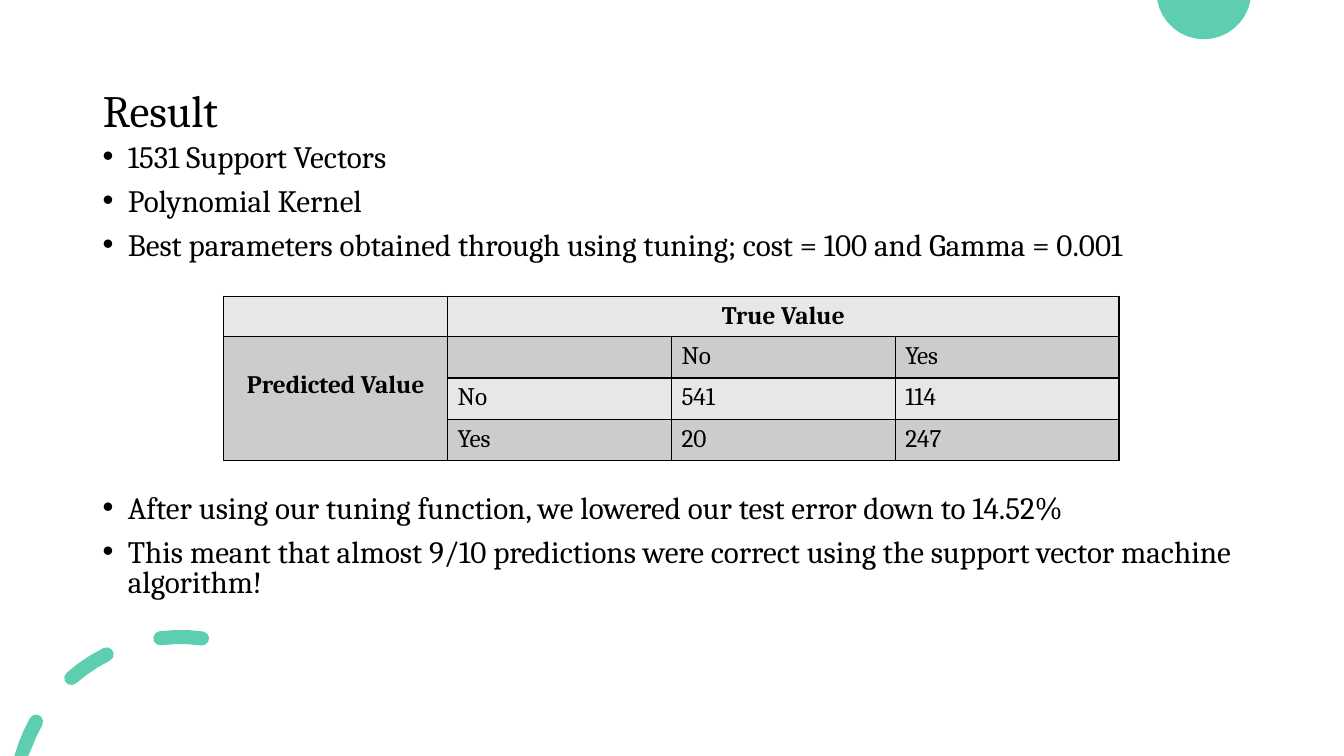
from math import cos, radians, sin

from lxml.etree import SubElement
from pptx import Presentation
from pptx.dml.color import RGBColor
from pptx.enum.text import MSO_ANCHOR, PP_ALIGN
from pptx.oxml.ns import qn
from pptx.util import Inches, Pt

FONT = "Cambria"
BLACK, GREEN, LIGHT, DARK = "000000", "5DCEAF", "E7E7E7", "CCCCCC"
SLIDE_WIDTH, SLIDE_HEIGHT = 13.33, 7.5

SETUP = [
    "1531 Support Vectors",
    "Polynomial Kernel",
    "Best parameters obtained through using tuning; cost = 100 and Gamma = 0.001",
]
FINDINGS = [
    "After using our tuning function, we lowered our test error down to 14.52%",
    "This meant that almost 9/10 predictions were correct using the support "
    "vector machine algorithm!",
]
CONFUSION = [
    ["", "True Value", "", ""],
    ["Predicted Value", "", "No", "Yes"],
    ["", "No", "541", "114"],
    ["", "Yes", "20", "247"],
]
HEADINGS = ("True Value", "Predicted Value")


def color(value):
    return RGBColor.from_string(value)


def style(paragraph, size, bold=False):
    for span in paragraph.runs:
        span.font.name = FONT
        span.font.size = Pt(size)
        span.font.bold = bold
        span.font.color.rgb = color(BLACK)


def place(shape, box):
    shape.left, shape.top, shape.width, shape.height = map(Inches, box)


def arc(center, radius, start, end, steps):
    """Points on an arc, angles in degrees, kept inside the slide."""
    x, y = center
    angles = [radians(start + (end - start) * i / steps) for i in range(steps + 1)]
    return [
        (x + radius * cos(t), min(max(y - radius * sin(t), 0), SLIDE_HEIGHT))
        for t in angles
    ]


def round_dash(center, radius, thickness, start, end):
    """Outline of an arc-shaped stroke with round ends."""
    half = thickness / 2
    first, last = (arc(center, radius, angle, angle, 1)[0] for angle in (start, end))
    return (
        arc(center, radius + half, start, end, 3)
        + arc(last, half, end, end + 180, 5)[1:-1]
        + arc(center, radius - half, end, start, 3)
        + arc(first, half, start + 180, start + 360, 5)[1:-1]
    )


def add_outline(page, contours):
    contours = [[(Inches(x), Inches(y)) for x, y in points] for points in contours]
    builder = page.shapes.build_freeform(*contours[0][0])
    for index, points in enumerate(contours):
        if index:
            builder.move_to(*points[0])
        builder.add_line_segments(points[1:], close=True)
    shape = builder.convert_to_shape()
    shape.fill.solid()
    shape.fill.fore_color.rgb = color(GREEN)
    shape.line.fill.background()
    shape.shadow.inherit = False


def add_decoration(page):
    add_outline(page, [arc((11.94, -0.08), 0.47, 190, 350, 16)])
    dashes = [(150.8, 164), (116.5, 131.3), (82.5, 97)]
    add_outline(
        page, [round_dash((1.79, 7.96), 1.64, 0.14, *angles) for angles in dashes]
    )


def add_title(page, box, text):
    title = page.shapes.title
    place(title, box)
    frame = title.text_frame
    frame.text = text
    frame.vertical_anchor = MSO_ANCHOR.MIDDLE
    paragraph = frame.paragraphs[0]
    paragraph.alignment = PP_ALIGN.LEFT
    paragraph.line_spacing = 0.9
    style(paragraph, 32)


def add_bullets(page, box, lines):
    frame = page.shapes.add_textbox(*map(Inches, box)).text_frame
    frame.word_wrap = True
    frame.text = "\n".join(lines)
    for paragraph in frame.paragraphs:
        paragraph.line_spacing = 0.8
        paragraph.space_before = Pt(10)
        style(paragraph, 22.2)
        properties = paragraph._p.get_or_add_pPr()
        properties.set("marL", str(Inches(0.25)))
        properties.set("indent", str(Inches(-0.25)))
        SubElement(properties, qn("a:buFont"), typeface="Arial")
        SubElement(properties, qn("a:buChar"), char="•")


def add_borders(cell):
    properties = cell._tc.get_or_add_tcPr()
    for position, side in enumerate(("a:lnL", "a:lnR", "a:lnT", "a:lnB")):
        line = SubElement(properties, qn(side), w=str(Pt(1)))
        fill = SubElement(line, qn("a:solidFill"))
        SubElement(fill, qn("a:srgbClr"), val=BLACK)
        properties.insert(position, line)


def add_confusion_table(page, box):
    table = page.shapes.add_table(4, 4, *map(Inches, box)).table
    for column in table.columns:
        column.width = Inches(box[2] / 4)
    for index, height in enumerate((0.38, 0.41, 0.41, 0.41)):
        table.rows[index].height = Inches(height)
    table.cell(0, 1).merge(table.cell(0, 3))
    table.cell(1, 0).merge(table.cell(3, 0))
    for r, row in enumerate(CONFUSION):
        for c, text in enumerate(row):
            cell = table.cell(r, c)
            cell.fill.solid()
            cell.fill.fore_color.rgb = color(DARK if r % 2 else LIGHT)
            add_borders(cell)
            if not text:
                continue
            cell.text = text
            paragraph = cell.text_frame.paragraphs[0]
            style(paragraph, 18, bold=text in HEADINGS)
            if text in HEADINGS:
                paragraph.alignment = PP_ALIGN.CENTER
    table.cell(1, 0).margin_top = Inches(0.34)


def main():
    deck = Presentation()
    deck.slide_width = Inches(SLIDE_WIDTH)
    deck.slide_height = Inches(SLIDE_HEIGHT)
    page = deck.slides.add_slide(deck.slide_layouts[5])
    add_decoration(page)
    add_title(page, (0.92, 0.4, 11.5, 1.45), "Result")
    add_bullets(page, (0.92, 1.39, 11.5, 1.4), SETUP)
    add_confusion_table(page, (2.22, 2.94, 8.88, 1.61))
    add_bullets(page, (0.92, 4.87, 11.5, 1.4), FINDINGS)
    deck.save("out.pptx")


if __name__ == "__main__":
    main()
